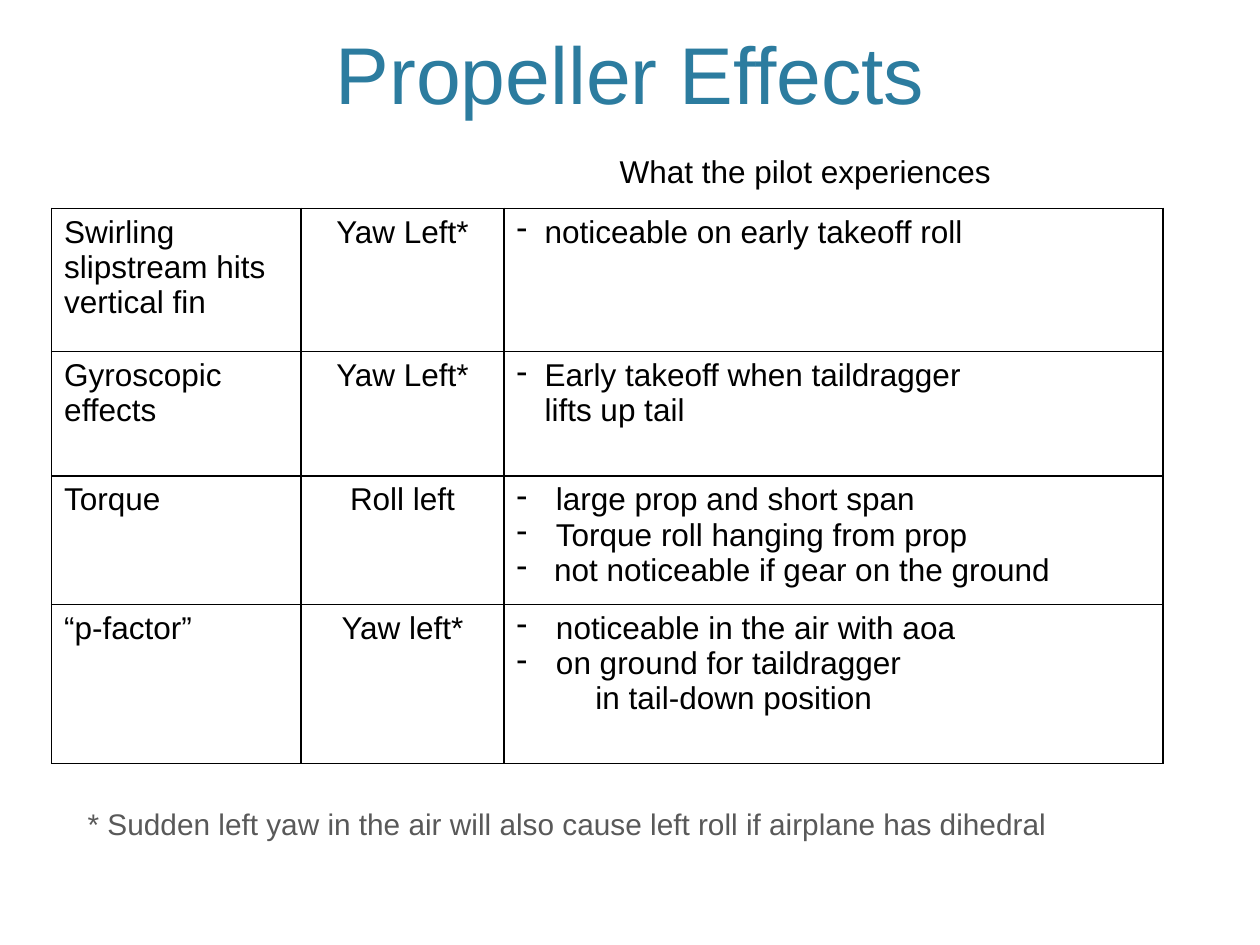
from pptx import Presentation, util as u
from pptx.dml.color import RGBColor
from pptx.enum import text as t
from pptx.oxml.ns import qn
from lxml import etree

Pt = u.Pt
BLACK, BLUE, GREY = "000000", "2C7C9F", "595959"
LEFT, CENTER = t.PP_ALIGN.LEFT, t.PP_ALIGN.CENTER

# Each experience is (text, text indent in points, has a dash).
EFFECTS = [
    (82, "Swirling slipstream hits vertical fin", "Yaw Left*",
     [("noticeable on early takeoff roll", 16, True)]),
    (71, "Gyroscopic effects", "Yaw Left*",
     [("Early takeoff when taildragger\nlifts up tail", 16, True)]),
    (73.5, "Torque", "Roll left",
     [("large prop and short span", 22.5, True),
      ("Torque roll hanging from prop", 22.5, True),
      ("not noticeable if gear on the ground", 21.5, True)]),
    (91, "“p-factor”", "Yaw left*",
     [("noticeable in the air with aoa", 22.5, True),
      ("on ground for taildragger", 22.5, True),
      ("in tail-down position", 45, False)]),
]
COLUMNS = (142.5, 116, 376.5)


def rgb(value):
    return RGBColor.from_string(value)


def write(para, words, size=18, color=BLACK, align=LEFT, indent=0, dash=False):
    """Fill a paragraph; a newline in the words becomes a line break."""
    para.alignment = align
    if indent:
        props = para._p.get_or_add_pPr()
        props.set("marL", str(Pt(indent)))
        props.set("indent", str(-Pt(indent) if dash else 0))
        if dash:
            etree.SubElement(props, qn("a:buChar")).set("char", "-")
    for number, line in enumerate(words.split("\n")):
        if number:
            para.add_line_break()
        span = para.add_run()
        span.text = line
        span.font.name = "Arial"
        span.font.size = Pt(size)
        span.font.color.rgb = rgb(color)


def add_text(page, box, words, anchor=t.MSO_ANCHOR.TOP, wrap=True, **style):
    frame = page.shapes.add_textbox(*map(Pt, box)).text_frame
    frame.word_wrap = wrap
    frame.vertical_anchor = anchor
    write(frame.paragraphs[0], words, **style)


def outline(cell):
    props = cell._tc.get_or_add_tcPr()
    for place, side in enumerate(("lnL", "lnR", "lnT", "lnB")):
        line = etree.Element(qn(f"a:{side}"), w=str(Pt(1)))
        fill = etree.SubElement(line, qn("a:solidFill"))
        etree.SubElement(fill, qn("a:srgbClr"), val=BLACK)
        props.insert(place, line)


def add_effects_table(page, left, top):
    heights = [effect[0] for effect in EFFECTS]
    table = page.shapes.add_table(
        len(EFFECTS), len(COLUMNS), Pt(left), Pt(top),
        Pt(sum(COLUMNS)), Pt(sum(heights))).table
    table.first_row = table.horz_banding = False
    for column, width in zip(table.columns, COLUMNS):
        column.width = Pt(width)
    for row, (height, cause, motion, experiences) in zip(table.rows, EFFECTS):
        row.height = Pt(height)
        for cell in row.cells:
            cell.fill.background()
            outline(cell)
        cause_cell, motion_cell, experience_cell = row.cells
        write(cause_cell.text_frame.paragraphs[0], cause)
        write(motion_cell.text_frame.paragraphs[0], motion, align=CENTER)
        frame = experience_cell.text_frame
        for number, (words, indent, dash) in enumerate(experiences):
            para = frame.add_paragraph() if number else frame.paragraphs[0]
            write(para, words, indent=indent, dash=dash)


def add_title(page, box, words):
    title = page.shapes.title
    title.left, title.top, title.width, title.height = map(Pt, box)
    title.text_frame.vertical_anchor = t.MSO_ANCHOR.BOTTOM
    write(title.text_frame.paragraphs[0], words, size=46, color=BLUE, align=CENTER)


def build_propeller_slide(deck):
    page = deck.slides.add_slide(deck.slide_layouts[6])
    add_text(page, (43, 16.5, 634, 56), "Propeller Effects",
             anchor=t.MSO_ANCHOR.BOTTOM, size=46, color=BLUE, align=CENTER)
    add_text(page, (43, 457, 621, 41),
             "* Sudden left yaw in the air will also cause left roll "
             "if airplane has dihedral", size=17, color=GREY)
    add_effects_table(page, 29.5, 119)
    add_text(page, (347, 83.5, 229, 29), "What the pilot experiences", wrap=False)


def main():
    deck = Presentation()
    deck.slide_width, deck.slide_height = Pt(720), Pt(540)
    build_propeller_slide(deck)
    deck.save("out.pptx")


if __name__ == "__main__":
    main()
